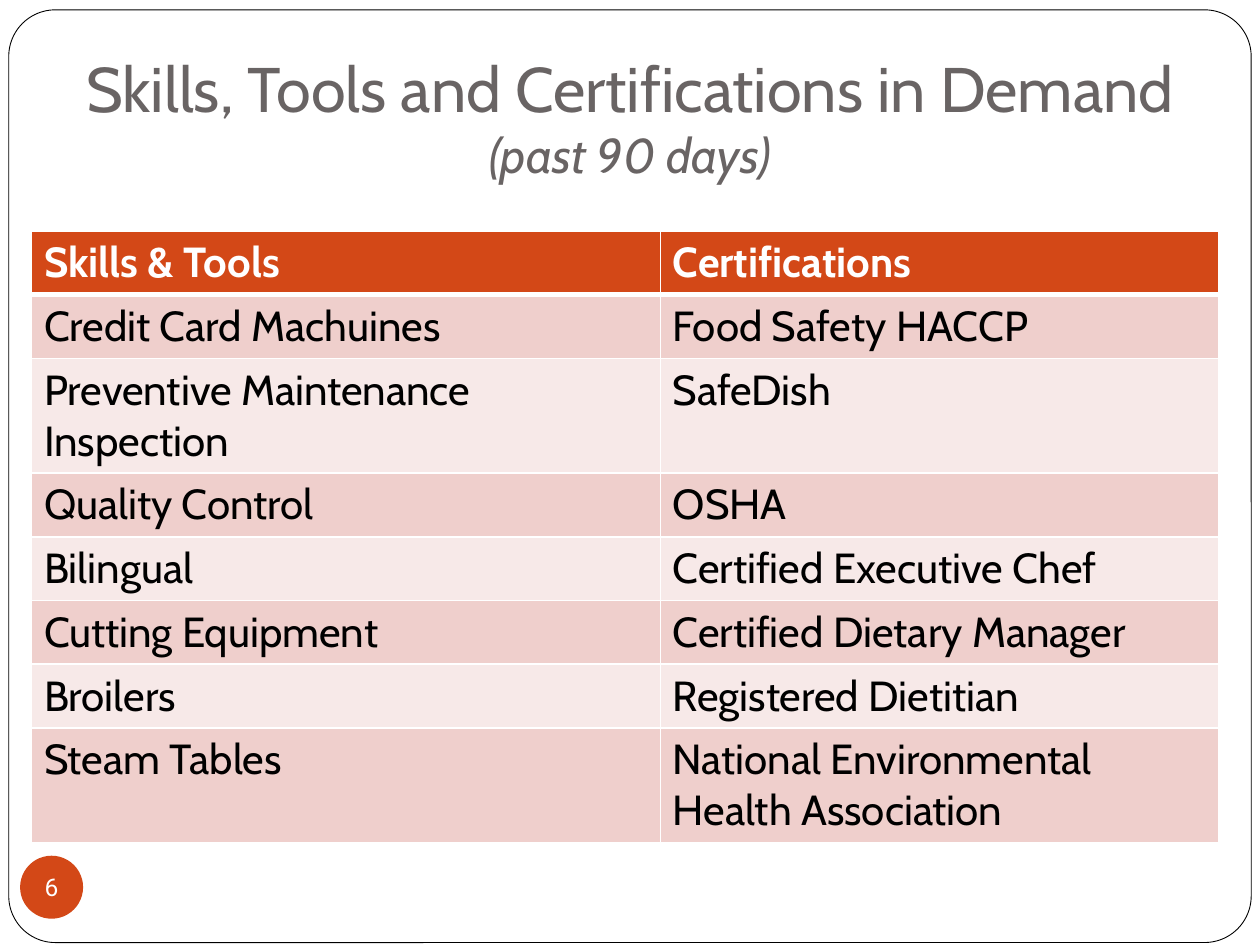
import pptx
import pptx.util
import pptx.oxml
import pptx.oxml.ns
import pptx.dml.color
import pptx.enum.shapes
import pptx.enum.text

Pt = pptx.util.Pt
SHAPE = pptx.enum.shapes.MSO_SHAPE
ANCHOR = pptx.enum.text.MSO_ANCHOR
ALIGN = pptx.enum.text.PP_ALIGN

# Content
TITLE = [("Skills, Tools and Certifications in Demand ", 36, False),
         ("(past 90 days)", 27.9, True)]
ROWS = [
    ("Skills & Tools", "Certifications"),
    ("Credit Card Machuines", "Food Safety HACCP"),
    ("Preventive Maintenance Inspection", "SafeDish"),
    ("Quality Control", "OSHA"),
    ("Bilingual", "Certified Executive Chef"),
    ("Cutting Equipment", "Certified Dietary Manager"),
    ("Broilers", "Registered Dietitian"),
    ("Steam Tables", "National Environmental Health Association"),
]
PAGE = "6"
COLORS = {"white": "FFFFFF", "black": "000000", "accent": "D34817",
          "title": "696464", "odd": "EFCFCC", "even": "F7E9E8"}
COL_WIDTHS = (359.3, 319)
ROW_HEIGHT = 29.5


def rgb(name):
    return pptx.dml.color.RGBColor.from_string(COLORS[name])


def fill(obj, name):
    obj.fill.solid()
    obj.fill.fore_color.rgb = rgb(name)


def style(r, size, color, font="Cabin", bold=False, italic=False):
    f = r.font
    f.name, f.size, f.bold, f.italic = font, Pt(size), bold, italic
    f.color.rgb = rgb(color)


def add_shape(s, kind, box, color):
    sp = s.shapes.add_shape(kind, *map(Pt, box))
    sp.shadow.inherit = False
    fill(sp, color)
    return sp


def set_borders(cell, widths):
    tcPr = cell._tc.get_or_add_tcPr()
    for i, (side, width) in enumerate(widths.items()):
        tcPr.insert(i, pptx.oxml.parse_xml(
            f'<a:ln{side} {pptx.oxml.ns.nsdecls("a")} w="{Pt(width)}"><a:solidFill>'
            f'<a:srgbClr val="{COLORS["white"]}"/></a:solidFill></a:ln{side}>'))


prs = pptx.Presentation()
prs.slide_width, prs.slide_height = Pt(720), Pt(540)
s = prs.slides.add_slide(prs.slide_layouts[5])

# Rounded frame
frame = add_shape(s, SHAPE.ROUNDED_RECTANGLE, (5, 5.6, 710, 533), "white")
frame.adjustments[0] = 0.05
frame.line.color.rgb = rgb("black")
frame.line.width = Pt(0.5)

# Page number badge
badge = add_shape(s, SHAPE.OVAL, (11.5, 489, 36, 36), "accent")
badge.line.fill.background()
tf = badge.text_frame
tf.margin_left = tf.margin_right = tf.margin_top = tf.margin_bottom = 0
tf.word_wrap = False
tf.vertical_anchor = ANCHOR.MIDDLE
tf.text = PAGE
p = tf.paragraphs[0]
p.alignment = ALIGN.CENTER
style(p.runs[0], 14, "white", "Roboto")

# Table
table = s.shapes.add_table(len(ROWS), len(COL_WIDTHS), Pt(18), Pt(132),
                           Pt(sum(COL_WIDTHS)), Pt(ROW_HEIGHT * len(ROWS))).table
for col, width in zip(table.columns, COL_WIDTHS):
    col.width = Pt(width)
for i, row in enumerate(ROWS):
    header = i == 0
    table.rows[i].height = Pt(ROW_HEIGHT)
    for j, text in enumerate(row):
        cell = table.cell(i, j)
        cell.text = text
        style(cell.text_frame.paragraphs[0].runs[0], 24,
              "white" if header else "black", bold=header)
        fill(cell, "accent" if header else "odd" if i % 2 else "even")
        set_borders(cell, {"L": 1, "R": 1, "T": 3 if i == 1 else 1,
                           "B": 3 if header else 1})

# Title, brought in front of the frame
title = s.shapes.title
s.shapes.element.append(title.element)
title.left, title.top, title.width, title.height = map(Pt, (24, 21.6, 672, 90))
tf = title.text_frame
tf.word_wrap = True
tf.vertical_anchor = ANCHOR.MIDDLE
p = tf.paragraphs[0]
p.alignment = ALIGN.CENTER
for text, size, italic in TITLE:
    r = p.add_run()
    r.text = text
    style(r, size, "title", italic=italic)

prs.save("out.pptx")
